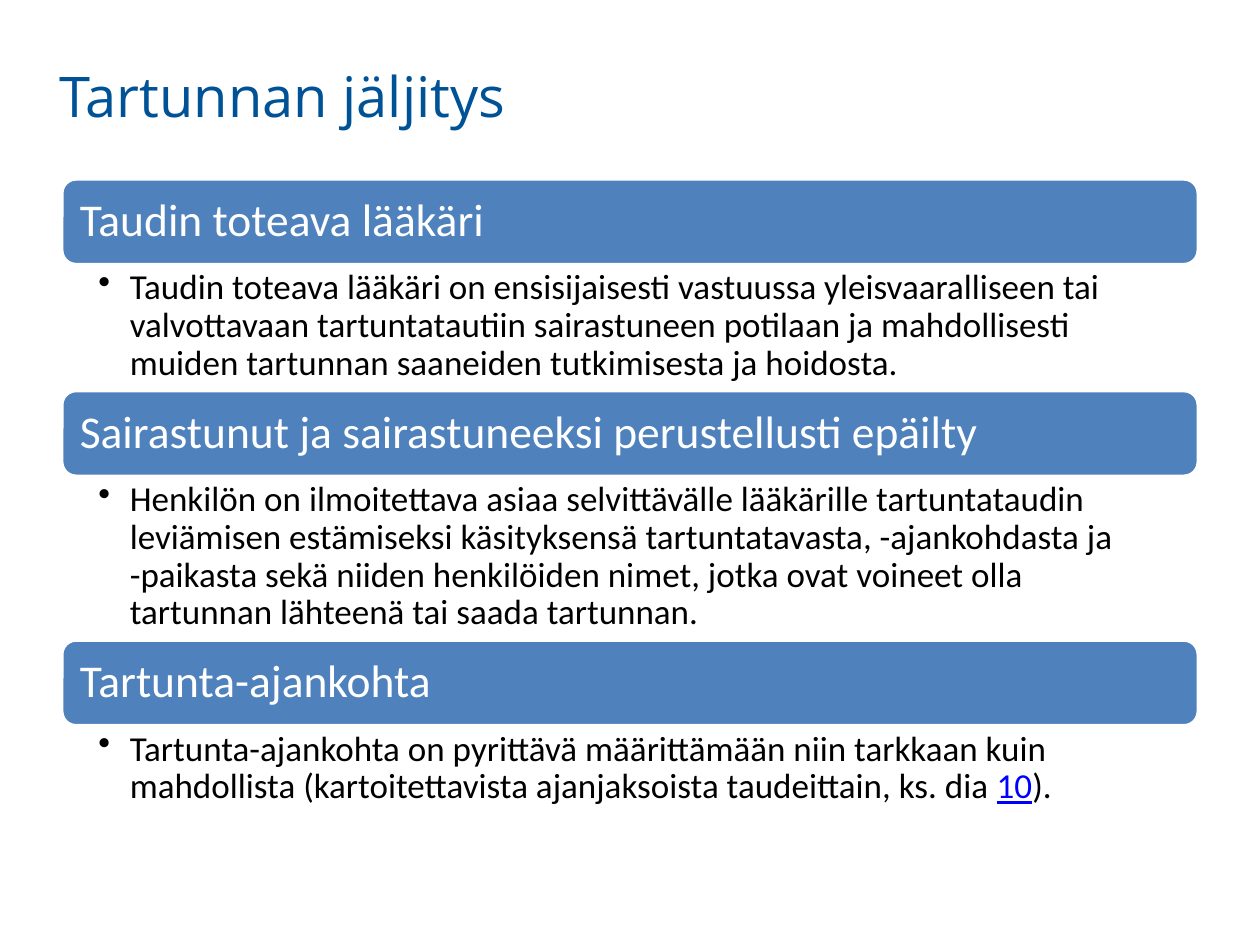
import dataclasses

import pptx
import pptx.dml.color
import pptx.enum.shapes
import pptx.enum.text
import pptx.oxml
import pptx.oxml.ns
import pptx.util

Inches = pptx.util.Inches
Anchor = pptx.enum.text.MSO_ANCHOR


@dataclasses.dataclass(frozen=True)
class Theme:
    title_font: str = "Open Sans"
    body_font: str = "Calibri"
    title_size: int = 32
    heading_size: int = 26
    body_size: int = 20
    title_color: str = "005296"
    bar_color: str = "4F81BD"
    light: str = "FFFFFF"
    dark: str = "000000"
    reference: str = "0000FF"


class SlideBuilder:
    def __init__(self, slide, theme):
        self.slide = slide
        self.theme = theme

    def color(self, value):
        return pptx.dml.color.RGBColor.from_string(value)

    def set_frame(self, frame, margins, anchor):
        frame.word_wrap = True
        frame.auto_size = pptx.enum.text.MSO_AUTO_SIZE.NONE
        frame.vertical_anchor = anchor
        (frame.margin_left, frame.margin_top,
         frame.margin_right, frame.margin_bottom) = map(Inches, margins)

    def add_run(self, paragraph, text, font, size, color, underline=False):
        run = paragraph.add_run()
        run.text = text
        run.font.name = font
        run.font.size = pptx.util.Pt(size)
        run.font.color.rgb = self.color(color)
        if underline:
            run.font.underline = True

    def add_title(self, text, left, top, width, height):
        title = self.slide.shapes.title
        title.left, title.top = Inches(left), Inches(top)
        title.width, title.height = Inches(width), Inches(height)
        self.set_frame(title.text_frame, (0.1, 0.05, 0.1, 0.05), Anchor.TOP)
        paragraph = title.text_frame.paragraphs[0]
        paragraph.alignment = pptx.enum.text.PP_ALIGN.LEFT
        self.add_run(paragraph, text, self.theme.title_font,
                     self.theme.title_size, self.theme.title_color)

    def add_heading_bar(self, text, left, top, width, height):
        bar = self.slide.shapes.add_shape(
            pptx.enum.shapes.MSO_SHAPE.ROUNDED_RECTANGLE,
            Inches(left), Inches(top), Inches(width), Inches(height))
        bar.shadow.inherit = False
        bar.fill.solid()
        bar.fill.fore_color.rgb = self.color(self.theme.bar_color)
        bar.line.color.rgb = self.color(self.theme.light)
        bar.line.width = pptx.util.Pt(2)
        # The rounded corners already inset the text a little
        self.set_frame(bar.text_frame, (0.11, 0.11, 0.11, 0.11), Anchor.MIDDLE)
        paragraph = bar.text_frame.paragraphs[0]
        paragraph.alignment = pptx.enum.text.PP_ALIGN.LEFT
        paragraph.line_spacing = 0.9
        self.add_run(paragraph, text, self.theme.body_font,
                     self.theme.heading_size, self.theme.light)

    def add_bullet_text(self, parts, left, top, width, height):
        """Each part is plain text, or a (text, is_reference) pair."""
        box = self.slide.shapes.add_textbox(
            Inches(left), Inches(top), Inches(width), Inches(height))
        self.set_frame(box.text_frame, (0.29, 0.04, 0.2, 0.04), Anchor.TOP)
        paragraph = box.text_frame.paragraphs[0]
        paragraph.level = 1
        paragraph.line_spacing = 0.9
        properties = paragraph._p.get_or_add_pPr()
        properties.set("marL", str(Inches(0.25)))
        properties.set("indent", str(Inches(-0.25)))
        properties.append(pptx.oxml.parse_xml(
            f'<a:buChar {pptx.oxml.ns.nsdecls("a")} char="•"/>'))
        for text, is_reference in parts:
            color = self.theme.reference if is_reference else self.theme.dark
            for index, line in enumerate(text.split("\n")):
                if index:
                    paragraph.add_line_break()
                self.add_run(paragraph, line, self.theme.body_font,
                             self.theme.body_size, color, is_reference)


# Heading, height of the explanation, explanation
SECTIONS = [
    ("Taudin toteava lääkäri", 1.0, [
        ("Taudin toteava lääkäri on ensisijaisesti vastuussa yleisvaaralliseen "
         "tai valvottavaan tartuntatautiin sairastuneen potilaan ja "
         "mahdollisesti muiden tartunnan saaneiden tutkimisesta ja hoidosta.",
         False)]),
    ("Sairastunut ja sairastuneeksi perustellusti epäilty", 1.3, [
        ("Henkilön on ilmoitettava asiaa selvittävälle lääkärille "
         "tartuntataudin leviämisen estämiseksi käsityksensä "
         "tartuntatavasta, -ajankohdasta ja\n-paikasta sekä niiden "
         "henkilöiden nimet, jotka ovat voineet olla tartunnan lähteenä "
         "tai saada tartunnan.", False)]),
    ("Tartunta-ajankohta", 0.69, [
        ("Tartunta-ajankohta on pyrittävä määrittämään niin tarkkaan kuin "
         "mahdollista (kartoitettavista ajanjaksoista taudeittain, ks. dia ",
         False),
        ("10", True),
        (").", False)]),
]


def main():
    presentation = pptx.Presentation()
    presentation.slide_width, presentation.slide_height = Inches(10), Inches(7.5)
    slide = presentation.slides.add_slide(presentation.slide_layouts[5])
    builder = SlideBuilder(slide, Theme())

    builder.add_title("Tartunnan jäljitys", 0.37, 0.44, 9.02, 1.26)

    # Stack of headings, each followed by its explanation
    left, top, width, bar_height = 0.49, 1.42, 9.02, 0.68
    for heading, text_height, parts in SECTIONS:
        builder.add_heading_bar(heading, left, top, width, bar_height)
        top += bar_height
        builder.add_bullet_text(parts, left, top, width, text_height)
        top += text_height

    presentation.save("out.pptx")


if __name__ == "__main__":
    main()
